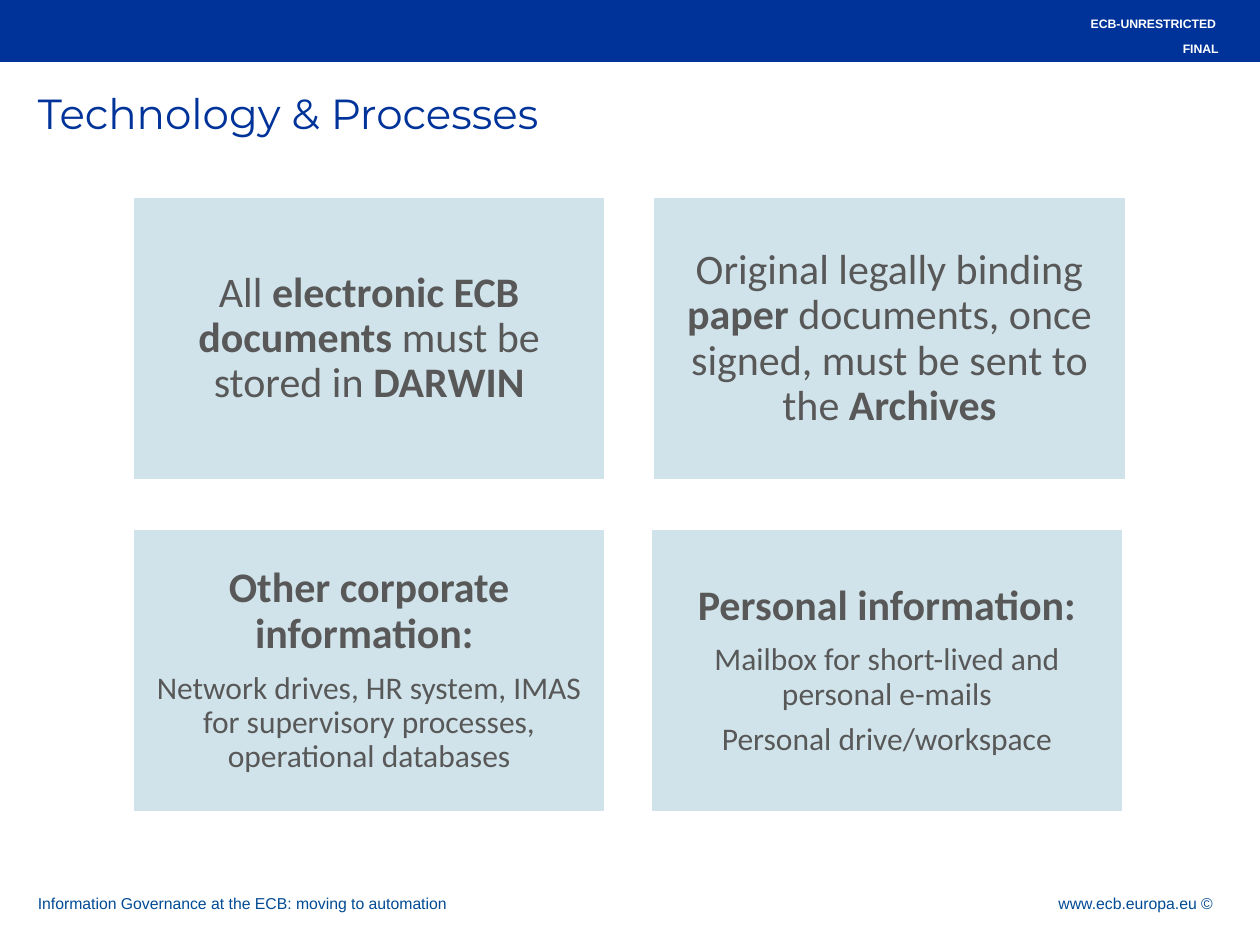
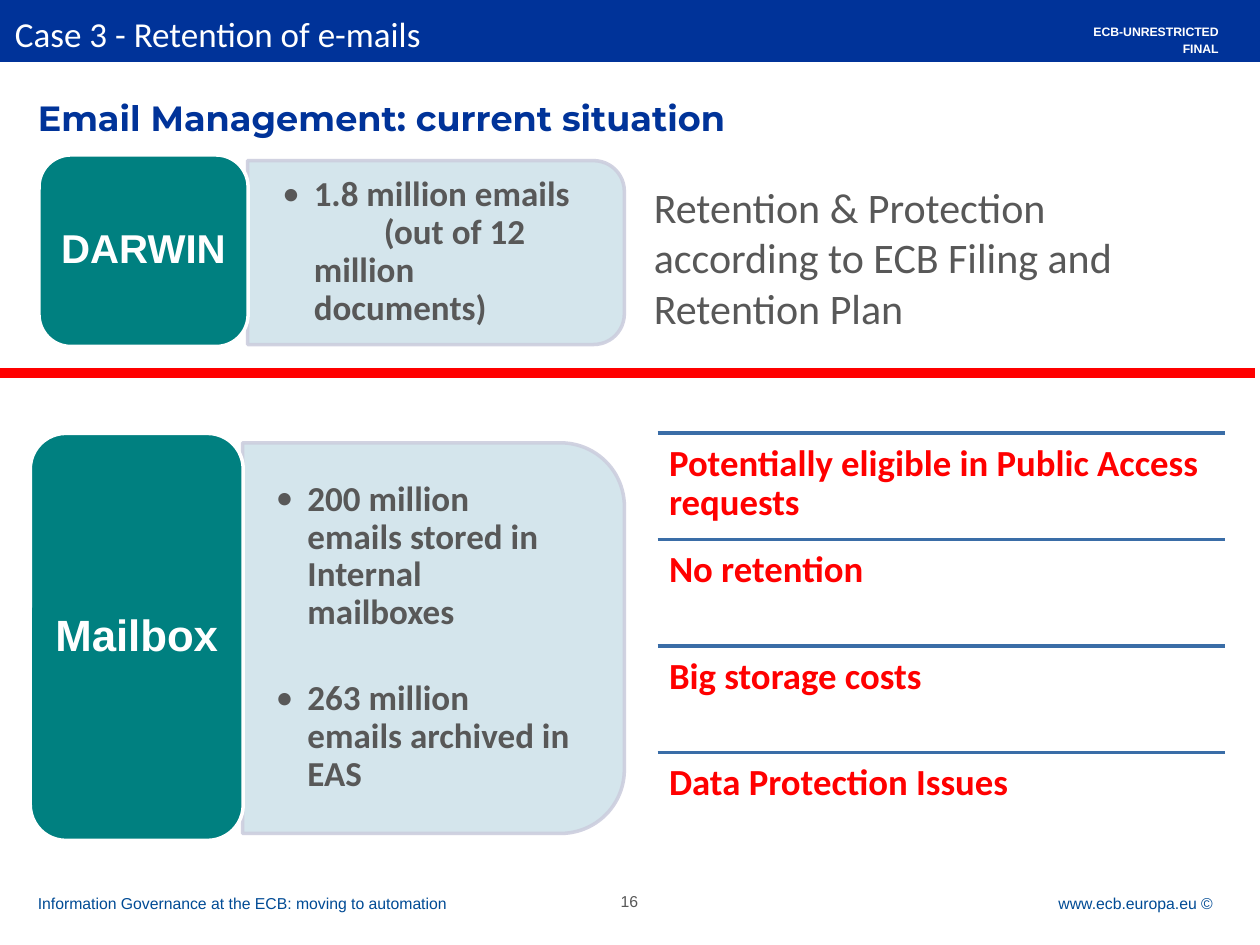
from dataclasses import dataclass

from lxml import etree
from pptx import Presentation
from pptx import util as u
from pptx.dml.color import RGBColor
from pptx.enum import shapes, text
from pptx.oxml.ns import qn

Pt = u.Pt
ALIGN = text.PP_ALIGN
MIDDLE = text.MSO_ANCHOR.MIDDLE
SHAPE = shapes.MSO_SHAPE


@dataclass(frozen=True)
class Theme:
    blue: str = "003399"
    footer_blue: str = "004B95"
    rule_blue: str = "3A6DA7"
    pale: str = "D0E3EA"
    pale_edge: str = "CCCEDE"
    teal: str = "008080"
    red: str = "FF0000"
    grey: str = "585858"
    white: str = "FFFFFF"
    heading_font: str = "Montserrat"
    body_font: str = "Calibri"
    label_font: str = "Arial"
    title: int = 24
    large: int = 24
    issue: int = 21
    medium: int = 20
    small: int = 18
    footer: int = 9
    marking: int = 7


THEME = Theme()
NO_INSETS = (0, 0, 0, 0)
DEFAULT_INSETS = (7.2, 3.6, 7.2, 3.6)


def add_text(frame, content, font=THEME.body_font, size=THEME.large, color=THEME.grey,
             bold=False, align=ALIGN.LEFT, spacing=None, before=0, after=0,
             left=0, indent=0, bullet=None):
    paragraph = frame.paragraphs[0]
    if paragraph.runs:
        paragraph = frame.add_paragraph()
    paragraph.alignment = align
    paragraph.line_spacing = spacing
    paragraph.space_before = Pt(before)
    paragraph.space_after = Pt(after)
    for position, part in enumerate(content.split("**")):
        if part:
            run = paragraph.add_run()
            run.text = part
            run.font.name = font
            run.font.size = Pt(size)
            run.font.bold = bold or position % 2 == 1
            run.font.color.rgb = RGBColor.from_string(color)
    properties = paragraph._p.get_or_add_pPr()
    properties.set("marL", str(Pt(left)))
    properties.set("indent", str(Pt(indent)))
    if bullet:
        etree.SubElement(properties, qn("a:buFont")).set("typeface", font)
        etree.SubElement(properties, qn("a:buChar")).set("char", bullet)
    else:
        etree.SubElement(properties, qn("a:buNone"))


def prepare_frame(shape, insets, anchor):
    frame = shape.text_frame
    frame.word_wrap = True
    frame.vertical_anchor = anchor
    (frame.margin_left, frame.margin_top,
     frame.margin_right, frame.margin_bottom) = map(Pt, insets)
    return frame


def add_text_box(slide, box, insets=NO_INSETS, anchor=text.MSO_ANCHOR.TOP):
    return prepare_frame(slide.shapes.add_textbox(*map(Pt, box)), insets, anchor)


def add_label(slide, box, content, insets=NO_INSETS, **style):
    add_text(add_text_box(slide, box, insets), content, **style)


def add_block(slide, kind, box, fill, line, width=2):
    shape = slide.shapes.add_shape(kind, *map(Pt, box))
    shape.shadow.inherit = False
    shape.fill.solid()
    shape.fill.fore_color.rgb = RGBColor.from_string(fill)
    shape.line.color.rgb = RGBColor.from_string(line)
    shape.line.width = Pt(width)
    return shape


def add_rule(slide, left, right, top, color, width):
    rule = slide.shapes.add_connector(shapes.MSO_CONNECTOR.STRAIGHT,
                                      Pt(left), Pt(top), Pt(right), Pt(top))
    rule.line.color.rgb = RGBColor.from_string(color)
    rule.line.width = Pt(width)
    etree.SubElement(rule._element.spPr, qn("a:effectLst"))


def add_marking(slide, box, content, insets=DEFAULT_INSETS):
    add_label(slide, box, content, insets, font=THEME.label_font, size=THEME.marking,
              color=THEME.white, bold=True, align=ALIGN.RIGHT)


def add_base_slide(presentation, title, **title_style):
    slide = presentation.slides.add_slide(presentation.slide_layouts[6])
    add_block(slide, SHAPE.RECTANGLE, (0, -2.16, 720, 37.44), THEME.blue, THEME.blue, 0.75)
    style = dict(font=THEME.heading_font, size=THEME.title, color=THEME.blue, spacing=Pt(27))
    add_label(slide, (21.6, 51.84, 676.8, 49.68), title, **(style | title_style))
    footer = dict(font=THEME.label_font, size=THEME.footer,
                  color=THEME.footer_blue, spacing=Pt(12))
    add_label(slide, (21.6, 509.76, 252.72, 15.12),
              "Information Governance at the ECB: moving to automation", **footer)
    add_label(slide, (514.8, 509.76, 180.72, 15.12), "www.ecb.europa.eu © ",
              align=ALIGN.RIGHT, **footer)
    add_marking(slide, (552.96, 20.16, 150.48, 15.84), "FINAL")
    return slide


def add_card(slide, left, top, heading, details=()):
    card = add_block(slide, SHAPE.RECTANGLE, (left, top, 270.72, 162.72),
                     THEME.pale, THEME.white)
    frame = prepare_frame(card, (7.2,) * 4, MIDDLE)
    for content, size in [(heading, THEME.large)] + [(item, THEME.small) for item in details]:
        add_text(frame, content, size=size, align=ALIGN.CENTER, spacing=0.9, after=0.35 * size)


def add_panel(slide, box, text_box, paragraphs):
    left, top, width, height = box
    shift = (width - height) / 2
    panel = add_block(slide, SHAPE.ROUND_2_SAME_RECTANGLE,
                      (left + shift, top - shift, height, width),
                      THEME.pale, THEME.pale_edge)
    panel.rotation = 90
    for color in panel._element.spPr.iter(qn("a:srgbClr")):
        etree.SubElement(color, qn("a:alpha")).set("val", "90000")
    frame = add_text_box(slide, text_box, (19.44, 10.08, 19.44, 10.08), MIDDLE)
    for content, style in paragraphs:
        bullet = dict(left=18, indent=-18, bullet="•", after=3)
        add_text(frame, content, size=THEME.medium, bold=True, spacing=0.9, **(bullet | style))


def add_store(slide, box, name, size):
    store = add_block(slide, SHAPE.ROUNDED_RECTANGLE, box, THEME.teal, THEME.white)
    frame = prepare_frame(store, DEFAULT_INSETS, MIDDLE)
    add_text(frame, name, font=THEME.label_font, size=size, color=THEME.white,
             bold=True, align=ALIGN.CENTER, spacing=0.9, after=0.35 * size)


def add_issues(slide, issues, left=375.84, top=247.5, width=324.4, pitch=60.85):
    for row, issue in enumerate(issues):
        row_top = top + row * pitch
        add_rule(slide, left, left + width, row_top, THEME.rule_blue, 2)
        add_label(slide, (left, row_top, width, pitch), issue, (6.48,) * 4,
                  size=THEME.issue, color=THEME.red, bold=True, spacing=0.9, after=7.35)


def build_processes(presentation):
    slide = add_base_slide(presentation, "Technology & Processes")
    add_marking(slide, (21.6, 9.36, 673.2, 8.64), "ECB-UNRESTRICTED", NO_INSETS)
    first_left, first_top, second_top = 75.6, 112.32, 301.68
    add_card(slide, first_left, first_top,
             "All **electronic ECB documents** must be stored in **DARWIN**")
    add_card(slide, 372.96, first_top,
             "Original legally binding **paper** documents, once signed, "
             "must be sent to the **Archives**")
    add_card(slide, first_left, second_top, "**Other corporate information: **",
             ["Network drives, HR system, IMAS for supervisory processes, "
              "operational databases"])
    add_card(slide, 371.52, second_top, "**Personal information:**",
             ["Mailbox for short-lived and personal e-mails", "Personal drive/workspace"])


def build_email_management(presentation):
    slide = add_base_slide(presentation, "Email Management: current situation",
                           size=THEME.medium, bold=True)
    add_label(slide, (1.44, 3.6, 673.2, 28.08), "Case 3 - Retention of e-mails",
              DEFAULT_INSETS, size=THEME.medium, color=THEME.white)
    add_marking(slide, (552.96, 10.08, 150.48, 15.84), "ECB-UNRESTRICTED")

    add_panel(slide, (141.48, 91.8, 215.28, 105.12), (141.84, 96.48, 210.24, 95.04),
              [("1.8 million emails", dict(after=0)),
               ("(out of 12 million documents)", dict(indent=40, bullet=None))])
    add_store(slide, (22.32, 88.56, 119.52, 109.44), "DARWIN", 23)
    add_label(slide, (366.48, 100.08, 337.68, 94.32),
              "Retention & Protection according to ECB Filing and Retention Plan",
              DEFAULT_INSETS)

    add_rule(slide, -2.88, 717.12, 213.12, THEME.red, 5.5)

    add_panel(slide, (138.6, 253.08, 218.16, 223.2), (138.24, 263.52, 207.36, 201.6),
              [("200 million emails stored in Internal mailboxes", {}),
               ("263 million emails archived in EAS", dict(before=24.5))])
    add_store(slide, (17.28, 247.68, 121.68, 232.56), "Mailbox", 25)
    add_issues(slide, ["Potentially eligible in Public Access requests", "No retention",
                       "Big storage costs", "Data Protection Issues"])
    add_label(slide, (343.44, 509.76, 32.4, 18.72), "16", font=THEME.label_font,
              size=THEME.footer, align=ALIGN.CENTER)


def main():
    presentation = Presentation()
    presentation.slide_width = Pt(720)
    presentation.slide_height = Pt(540)
    build_processes(presentation)
    build_email_management(presentation)
    presentation.save("out.pptx")


if __name__ == "__main__":
    main()
